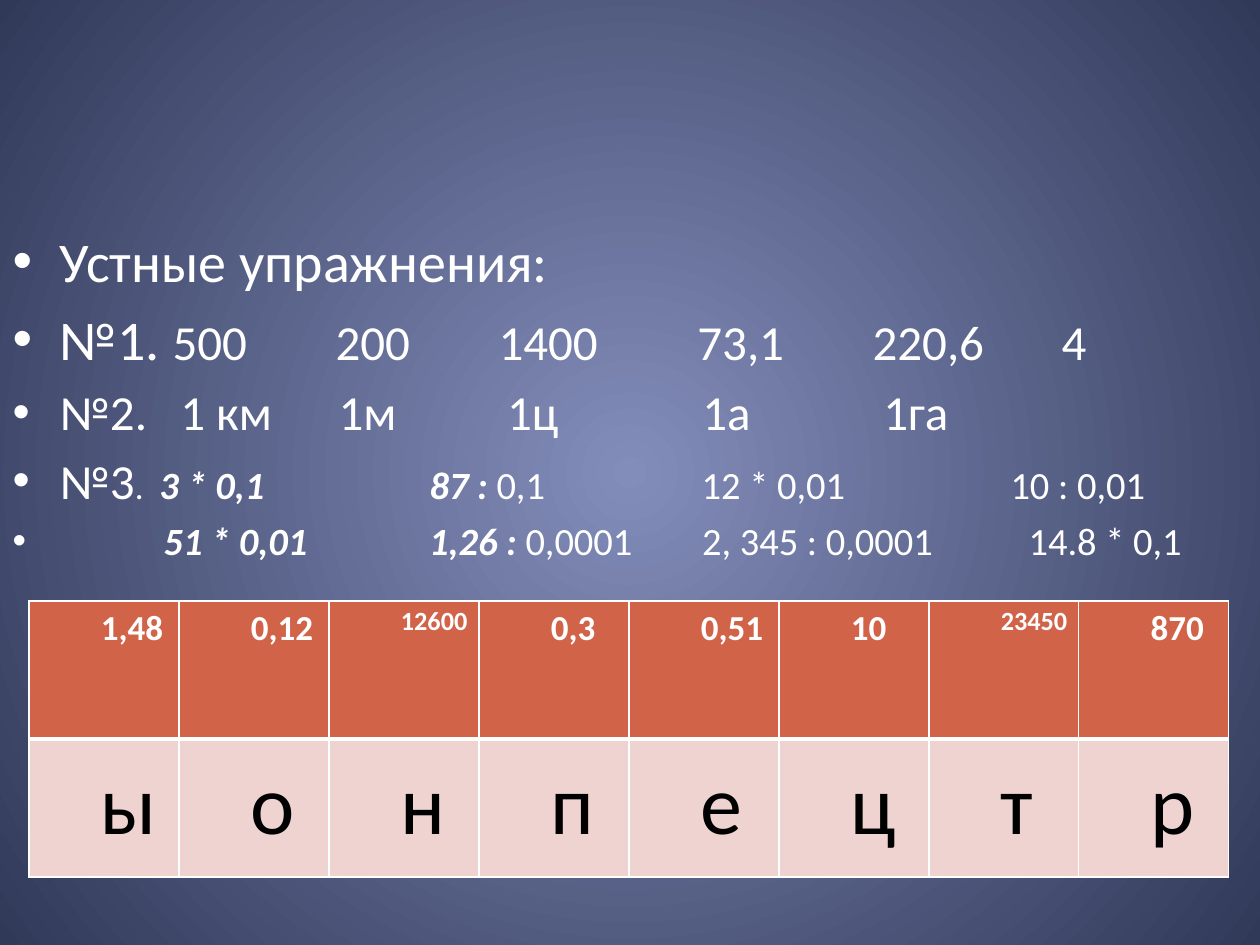
import pptx
import pptx.util
import pptx.dml.color
import pptx.enum.text
import pptx.oxml
import pptx.oxml.ns

PX_PER_INCH = 126
FONT = "Calibri"
SPACE_WIDTH = 0.226  # width of a Calibri space, in ems

WHITE = pptx.dml.color.RGBColor(0xFF, 0xFF, 0xFF)
BLACK = pptx.dml.color.RGBColor(0x00, 0x00, 0x00)
ORANGE = pptx.dml.color.RGBColor(0xD1, 0x63, 0x49)
PINK = pptx.dml.color.RGBColor(0xEE, 0xD3, 0xD0)
GLOW = pptx.dml.color.RGBColor(0x83, 0x8D, 0xBA)
NIGHT = pptx.dml.color.RGBColor(0x31, 0x39, 0x59)

BIG = {"size": 32}
MEDIUM = {"size": 28}
SMALL = {"size": 22}
STRONG = {"size": 22, "bold": True, "italic": True}

# Each line is a list of (text, format); a whole number is a gap in space widths
EXERCISES = [
    [("Устные упражнения:", BIG)],
    [("№1. ", BIG), ("500", MEDIUM), 8, ("200", MEDIUM), 8, ("1400", MEDIUM), 9,
     ("73,1", MEDIUM), 8, ("220,6", MEDIUM), 7, ("4", MEDIUM)],
    [("№2.", MEDIUM), 3, ("1 км", MEDIUM), 6, ("1м", MEDIUM), 10,
     ("1ц", MEDIUM), 13, ("1а", MEDIUM), 12, ("1га", MEDIUM)],
    [("№3", MEDIUM), (".", {"size": 20}), 2, ("3 * 0,1", STRONG), 19,
     ("87 :", STRONG), (" 0,1", SMALL), 18, ("12 * 0,01", SMALL), 19,
     ("10 : 0,01", SMALL)],
    [("51 * 0,01", STRONG), 14, ("1,26 :", STRONG), (" 0,0001", SMALL), 8,
     ("2, 345 : 0,0001", SMALL), 11, ("14.8 * 0,1", SMALL)],
]
LAST_LINE_INDENT = 151

ANSWERS = ["1,48", "0,12", "12600", "0,3", "0,51", "10", "23450", "870"]
LETTERS = "ыонпецтр"


def px(length):
    return round(length * 914400 / PX_PER_INCH)


def add_span(para, text, size, color, **style):
    span = para.add_run()
    span.text = text
    values = {"name": FONT, "size": pptx.util.Pt(size), **style}
    for name, value in values.items():
        setattr(span.font, name, value)
    span.font.color.rgb = color
    return span


def add_gap(para, spaces, size):
    """Widen one space by letter spacing to the given number of spaces."""
    span = add_span(para, " ", size, WHITE)
    extra = (spaces - 1) * SPACE_WIDTH * size
    span.font._element.set("spc", str(round(extra * 100)))


def paint_background(slide):
    fill = slide.background.fill
    fill.gradient()
    for stop, color, position in zip(fill.gradient_stops, (GLOW, NIGHT), (0, 1)):
        stop.color.rgb = color
        stop.position = position
    gradient = slide.background._cSld.find(".//" + pptx.oxml.ns.qn("a:gradFill"))
    linear = gradient.find(pptx.oxml.ns.qn("a:lin"))
    circle = pptx.oxml.parse_xml(
        f'<a:path {pptx.oxml.ns.nsdecls("a")} path="circle">'
        '<a:fillToRect l="50000" t="50000" r="50000" b="50000"/></a:path>')
    gradient.replace(linear, circle)


def fill_exercises(box):
    box.left, box.top, box.width, box.height = map(px, (0, 220, 1260, 686))
    frame = box.text_frame
    frame.word_wrap = True
    frame.auto_size = pptx.enum.text.MSO_AUTO_SIZE.NONE
    for index, line in enumerate(EXERCISES):
        para = frame.add_paragraph() if index else frame.paragraphs[0]
        for item in line:
            if isinstance(item, int):
                add_gap(para, item, size)
            else:
                text, style = item
                size = style["size"]
                add_span(para, text, color=WHITE, **style)
    # The last line stands under the first task of the line above
    properties = para._p.get_or_add_pPr()
    properties.set("marL", str(px(LAST_LINE_INDENT)))
    properties.set("indent", str(-px(LAST_LINE_INDENT)))


def set_borders(cell, bottom):
    properties = cell._tc.get_or_add_tcPr()
    widths = {"lnL": 1, "lnR": 1, "lnT": 1, "lnB": bottom}
    for index, (side, width) in enumerate(widths.items()):
        properties.insert(index, pptx.oxml.parse_xml(
            f'<a:{side} {pptx.oxml.ns.nsdecls("a")} w="{pptx.util.Pt(width)}">'
            f'<a:solidFill><a:srgbClr val="{WHITE}"/></a:solidFill></a:{side}>'))


def fill_cell(cell, text, fill, bottom, **style):
    margins = {"margin_left": 9, "margin_right": 9, "margin_top": 0, "margin_bottom": 0}
    for name, value in margins.items():
        setattr(cell, name, px(value))
    cell.fill.solid()
    cell.fill.fore_color.rgb = fill
    set_borders(cell, bottom)
    para = cell.text_frame.paragraphs[0]
    para.alignment = pptx.enum.text.PP_ALIGN.JUSTIFY
    para.line_spacing = 1.15
    para._p.get_or_add_pPr().set("marL", str(px(63)))
    add_span(para, text, **style)


def add_answers(slide):
    frame = slide.shapes.add_table(
        2, len(ANSWERS), px(29), px(601), px(150 * len(ANSWERS)), px(276))
    table = frame.table
    for column, (answer, letter) in enumerate(zip(ANSWERS, LETTERS)):
        size = 15 if len(answer) == 5 else 20
        fill_cell(table.cell(0, column), answer, ORANGE, 3,
                  size=size, color=WHITE, bold=True)
        fill_cell(table.cell(1, column), letter, PINK, 1,
                  size=48, color=BLACK, bold=False)


def main():
    deck = pptx.Presentation()
    deck.slide_width, deck.slide_height = px(1260), px(945)
    slide = deck.slides.add_slide(deck.slide_layouts[1])
    paint_background(slide)

    # The slide has no title
    title = slide.shapes.title._element
    title.getparent().remove(title)

    fill_exercises(slide.placeholders[1])
    add_answers(slide)
    deck.save("out.pptx")


if __name__ == "__main__":
    main()
